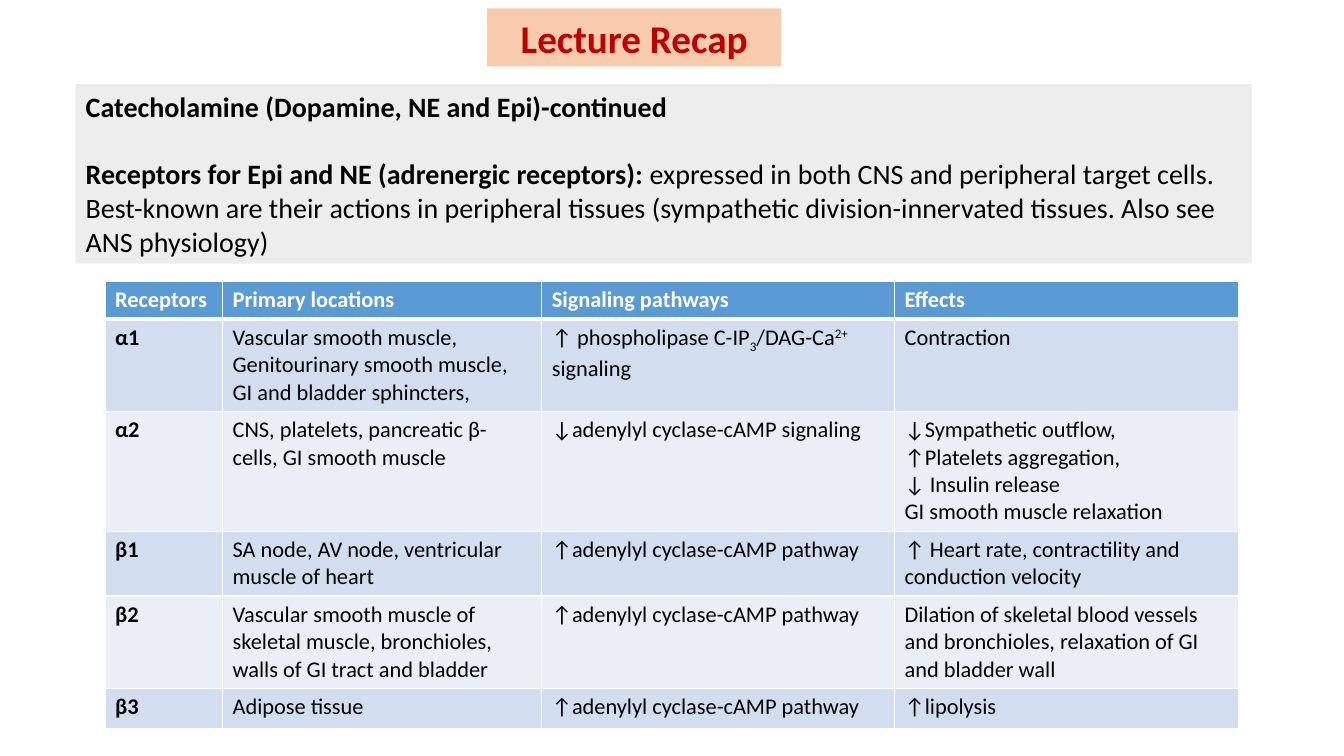
from dataclasses import dataclass

from lxml import etree
from pptx import Presentation
from pptx import util as u
from pptx.dml.color import RGBColor
from pptx.enum import text
from pptx.oxml import ns

UNIT = u.Inches(1) // 12  # the slide is a grid of 160 columns by 90 rows
COLS, ROWS = 160, 90


@dataclass(frozen=True)
class Theme:
    font: str = "Calibri"
    title_size: int = 28
    body_size: int = 20
    table_size: int = 16
    ink: str = "000000"
    white: str = "FFFFFF"
    title_ink: str = "C00000"
    title_fill: str = "F8CBAD"
    body_fill: str = "EDEDED"
    head_fill: str = "5B9BD5"
    bands: tuple = ("D2DEEF", "EAEFF7")


THEME = Theme()

SUMMARY = [
    [("Catecholamine (Dopamine, NE and Epi)-continued", True)],
    [("Receptors for Epi and NE (adrenergic receptors): ", True),
     ("expressed in both CNS and peripheral target cells. Best-known are their "
      "actions in peripheral tissues (sympathetic division-innervated tissues. "
      "Also see ANS physiology)", False)],
]

# A cell is plain text, or a list of (text, baseline shift in percent) runs.
CAMP_UP = "↑adenylyl cyclase-cAMP pathway"
RECEPTORS = [
    ["Receptors", "Primary locations", "Signaling pathways", "Effects"],
    ["α1",
     "Vascular smooth muscle,\nGenitourinary smooth muscle,\nGI and bladder sphincters,",
     [("↑ phospholipase C-IP", 0), ("3", -25), ("/DAG-Ca", 0), ("2+", 30),
      (" signaling", 0)],
     "Contraction"],
    ["α2", "CNS, platelets, pancreatic β-cells, GI smooth muscle",
     "↓adenylyl cyclase-cAMP signaling",
     "↓Sympathetic outflow,\n↑Platelets aggregation,\n↓ Insulin release\n"
     "GI smooth muscle relaxation"],
    ["β1", "SA node, AV node, ventricular muscle of heart", CAMP_UP,
     "↑ Heart rate, contractility and conduction velocity"],
    ["β2",
     "Vascular smooth muscle of skeletal muscle, bronchioles, walls of GI tract and bladder",
     CAMP_UP,
     "Dilation of skeletal blood vessels and bronchioles, relaxation of GI and bladder wall"],
    ["β3", "Adipose tissue", CAMP_UP, "↑lipolysis"],
]
COL_SHARES = [14, 38, 42, 41]
ROW_SHARES = [4.5, 10.8, 14.1, 7.5, 10.8, 4.8]


def grid(*lengths):
    return [int(n * UNIT) for n in lengths]


def rgb(color):
    return RGBColor.from_string(color)


def add_run(p, wording, size, color, bold, shift=0):
    r = p.add_run()
    r.text = wording
    r.font.name, r.font.size, r.font.bold = THEME.font, u.Pt(size), bold
    r.font.color.rgb = rgb(color)
    if shift:
        r._r.get_or_add_rPr().set("baseline", str(shift * 1000))


def place(sp, box, fill):
    """Move a placeholder to its box, fill it and return its text frame."""
    sp.left, sp.top, sp.width, sp.height = grid(*box)
    sp.fill.solid()
    sp.fill.fore_color.rgb = rgb(fill)
    tf = sp.text_frame
    tf.word_wrap = True
    tf.auto_size = text.MSO_AUTO_SIZE.NONE
    return tf


def title_band(s, box):
    tf = place(s.shapes.title, box, THEME.title_fill)
    p = tf.paragraphs[0]
    p.alignment = text.PP_ALIGN.CENTER
    add_run(p, "Lecture Recap", THEME.title_size, THEME.title_ink, True)


def summary_panel(s, box):
    tf = place(s.placeholders[1], box, THEME.body_fill)
    for i, runs in enumerate(SUMMARY):
        p = tf.paragraphs[0] if i == 0 else tf.add_paragraph()
        p.space_before = u.Pt(i * THEME.body_size * 1.22)
        pPr = p._p.get_or_add_pPr()
        pPr.set("marL", "0")
        pPr.set("indent", "0")
        etree.SubElement(pPr, ns.qn("a:buNone"))
        for wording, bold in runs:
            add_run(p, wording, THEME.body_size, THEME.ink, bold)


def border_cell(cell, bottom):
    """Draw 1 pt white sides, with the bottom side as wide as asked."""
    tcPr = cell._tc.get_or_add_tcPr()
    for side, width in (("lnL", 1), ("lnR", 1), ("lnT", 1), ("lnB", bottom)):
        ln = etree.SubElement(tcPr, ns.qn(f"a:{side}"), w=str(u.Pt(width)))
        solid = etree.SubElement(ln, ns.qn("a:solidFill"))
        etree.SubElement(solid, ns.qn("a:srgbClr"), val=THEME.white)


def fill_cell(cell, content, row, col):
    head = row == 0
    border_cell(cell, 3 if head else 1)
    cell.fill.solid()
    cell.fill.fore_color.rgb = rgb(THEME.head_fill if head else THEME.bands[(row - 1) % 2])
    if isinstance(content, str):
        paragraphs = [[(line, 0)] for line in content.split("\n")]
    else:
        paragraphs = [content]
    tf = cell.text_frame
    for i, runs in enumerate(paragraphs):
        p = tf.paragraphs[0] if i == 0 else tf.add_paragraph()
        for wording, shift in runs:
            add_run(p, wording, THEME.table_size, THEME.white if head else THEME.ink,
                    head or col == 0, shift)


def receptor_table(s, left, top):
    box = grid(left, top, sum(COL_SHARES), sum(ROW_SHARES))
    table = s.shapes.add_table(len(ROW_SHARES), len(COL_SHARES), *box).table
    for column, width in zip(table.columns, grid(*COL_SHARES)):
        column.width = width
    for row, height in zip(table.rows, grid(*ROW_SHARES)):
        row.height = height
    for i, contents in enumerate(RECEPTORS):
        for j, content in enumerate(contents):
            fill_cell(table.cell(i, j), content, i, j)


def main():
    prs = Presentation()
    prs.slide_width, prs.slide_height = grid(COLS, ROWS)
    s = prs.slides.add_slide(prs.slide_layouts[1])
    title_band(s, (58, 1, 35, 6.9))
    summary_panel(s, (9, 10, 140, 21.4))
    receptor_table(s, 12.5, 33.5)
    prs.save("out.pptx")


if __name__ == "__main__":
    main()
